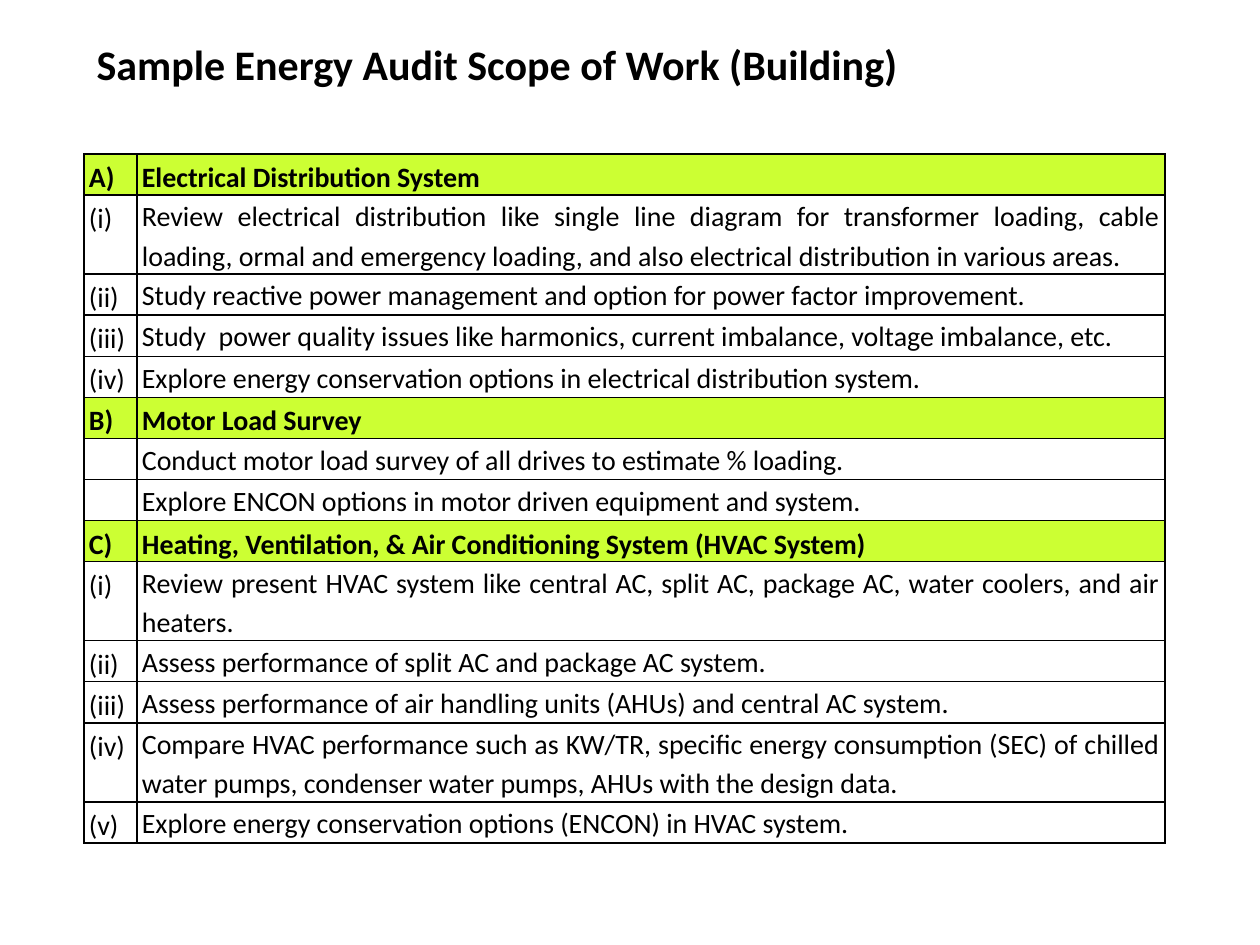
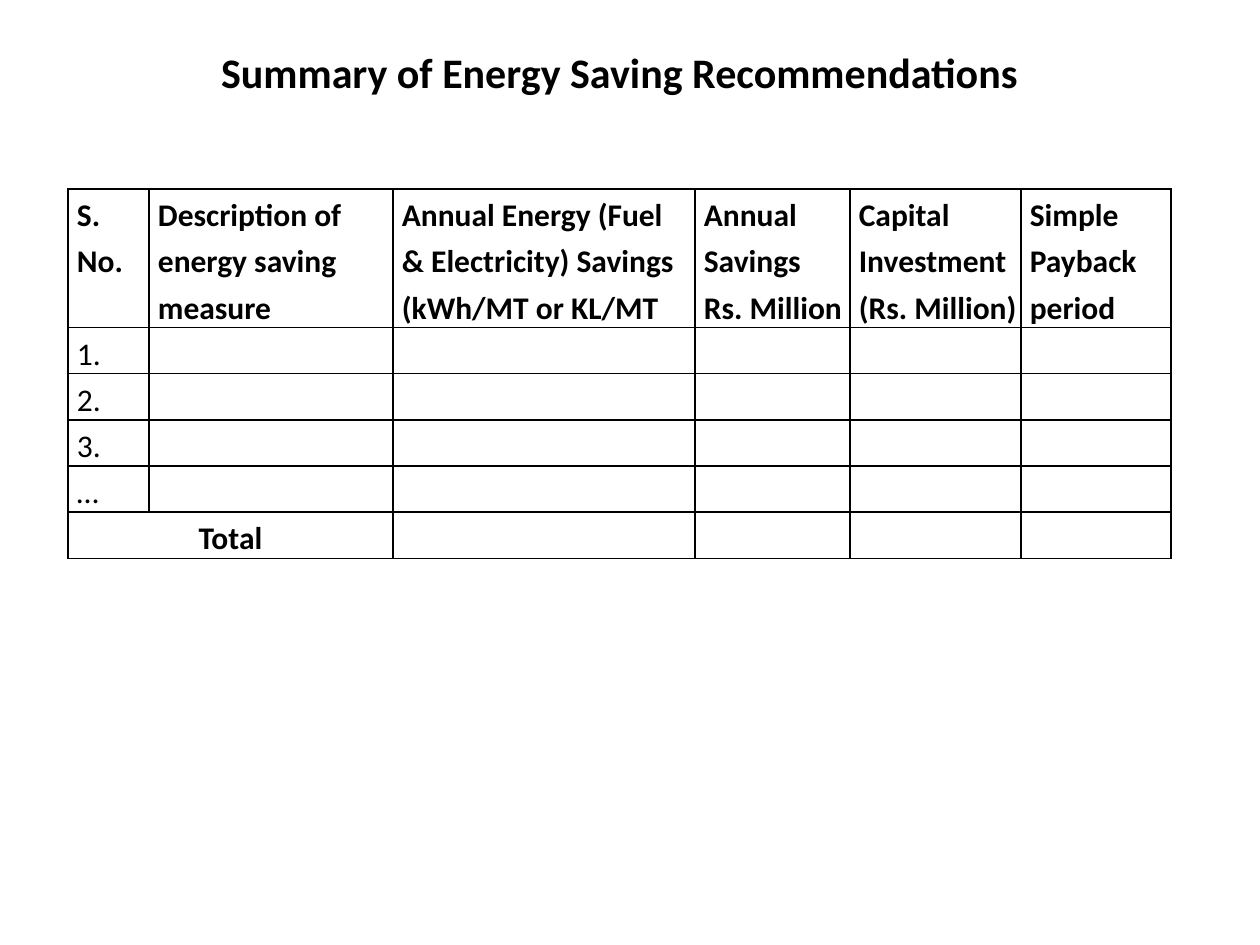
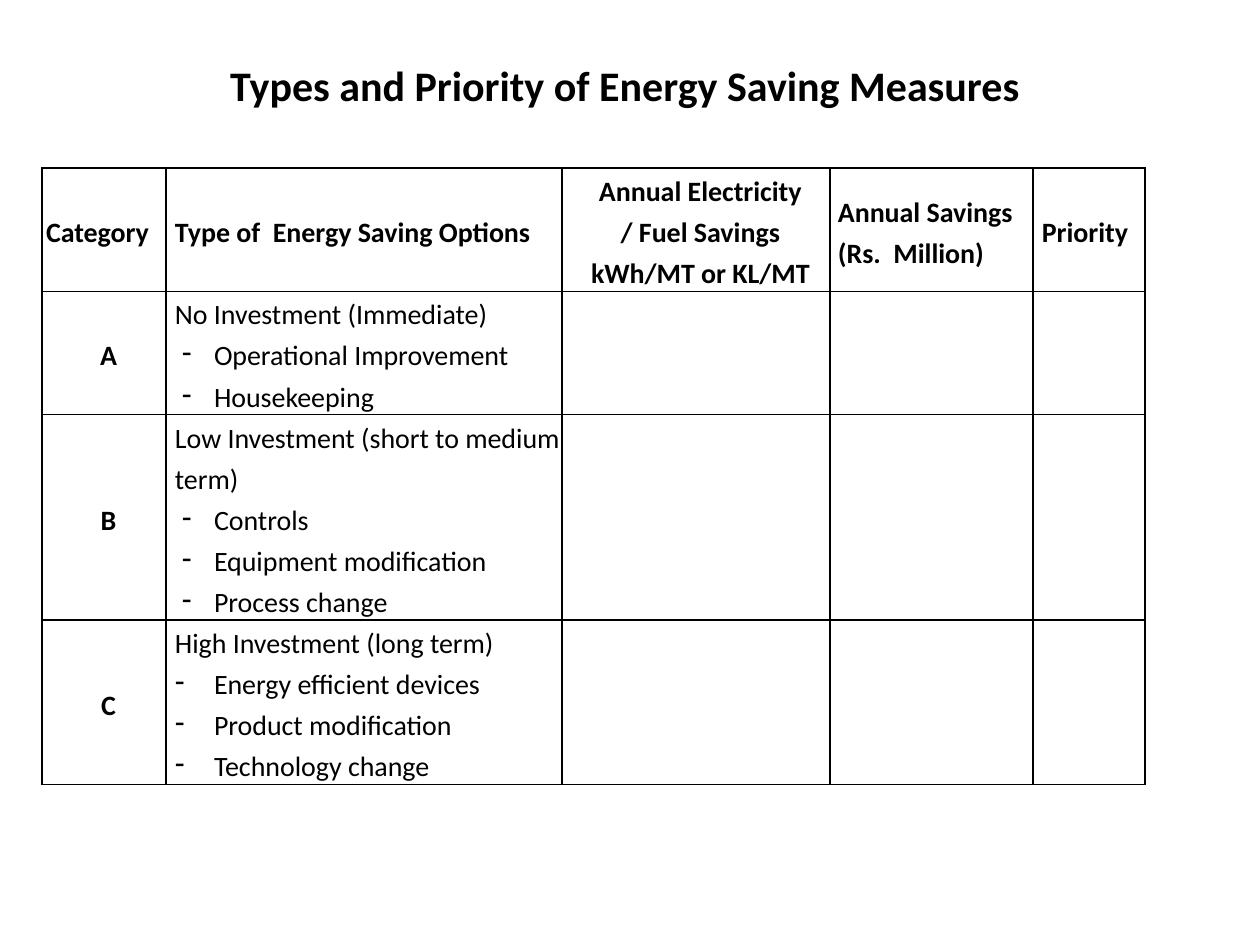
import pptx
import pptx.util
import pptx.dml.color
import pptx.enum.text
import pptx.oxml
import pptx.oxml.ns

PX = 914400 / 126
BLACK = pptx.dml.color.RGBColor(0x00, 0x00, 0x00)
LIME = pptx.dml.color.RGBColor(0xCC, 0xFF, 0x33)
ALIGN = pptx.enum.text.PP_ALIGN
ANCHOR = pptx.enum.text.MSO_ANCHOR
NS = pptx.oxml.ns.nsdecls("a")
MARGINS = ("margin_left", "margin_right", "margin_top", "margin_bottom")
BORDER = (
    '<a:{0} {1} w="12700"><a:solidFill><a:srgbClr val="{2}"/></a:solidFill></a:{0}>'
)

prs = pptx.Presentation()
prs.slide_width = int(1260 * PX)
prs.slide_height = int(945 * PX)


def add_table_slide(title, title_box, align, origin, cols, rows):
    s = prs.slides.add_slide(prs.slide_layouts[5])
    sp = s.shapes.title
    for k, v in zip(("left", "top", "width", "height"), title_box):
        setattr(sp, k, int(v * PX))
    tf = sp.text_frame
    tf.text = title
    tf.vertical_anchor = ANCHOR.TOP
    tf.auto_size = pptx.enum.text.MSO_AUTO_SIZE.NONE
    p = tf.paragraphs[0]
    p.alignment = align
    r = p.runs[0]
    for k, v in {"name": "Calibri", "size": pptx.util.Pt(24), "bold": True}.items():
        setattr(r.font, k, v)
    r.font.color.rgb = BLACK

    box = [int(v * PX) for v in (*origin, sum(cols), sum(rows))]
    tbl = s.shapes.add_table(len(rows), len(cols), *box).table
    tbl.first_row = tbl.horz_banding = False
    for col, w in zip(tbl.columns, cols):
        col.width = int(w * PX)
    for row, h in zip(tbl.rows, rows):
        row.height = int(h * PX)
    for cell in tbl.iter_cells():
        for k in MARGINS:
            setattr(cell, k, 0)
        tcPr = cell._tc.get_or_add_tcPr()
        for side in ("lnL", "lnR", "lnT", "lnB"):
            tcPr.append(pptx.oxml.parse_xml(BORDER.format(side, NS, BLACK)))
        cell.fill.background()
    return tbl


def write(cell, text, size, bold=False, indent=0, hang=32, **fmt):
    tf = cell.text_frame
    for i, line in enumerate(text.split("\n")):
        p = tf.paragraphs[0] if i == 0 else tf.add_paragraph()
        for k, v in {"line_spacing": 1.2, **fmt}.items():
            setattr(p, k, v)
        pPr = p._p.get_or_add_pPr()
        bullet = line.startswith("- ")
        pPr.set("marL", str(int((48 if bullet else indent) * PX)))
        if bullet:
            pPr.set("indent", str(int(-hang * PX)))
            pPr.append(pptx.oxml.parse_xml(f'<a:buChar {NS} char="-"/>'))
        r = p.add_run()
        r.text = line.removeprefix("- ")
        for k, v in {"name": "Calibri", "size": pptx.util.Pt(size), "bold": bold}.items():
            setattr(r.font, k, v)
        r.font.color.rgb = BLACK


scope = [
    ("A)", "Electrical Distribution System"),
    ("(i)", "Review electrical distribution like single line diagram for transformer loading, cable loading, ormal and emergency loading, and also electrical distribution in various areas. "),
    ("(ii)", "Study reactive power management and option for power factor improvement."),
    ("(iii)", "Study  power quality issues like harmonics, current imbalance, voltage imbalance, etc."),
    ("(iv)", "Explore energy conservation options in electrical distribution system."),
    ("B)", "Motor Load Survey"),
    ("", "Conduct motor load survey of all drives to estimate % loading."),
    ("", "Explore ENCON options in motor driven equipment and system."),
    ("C)", "Heating, Ventilation, & Air Conditioning System (HVAC System)"),
    ("(i)", "Review present HVAC system like central AC, split AC, package AC, water coolers, and air heaters."),
    ("(ii)", "Assess performance of split AC and package AC system."),
    ("(iii)", "Assess performance of air handling units (AHUs) and central AC system."),
    ("(iv)", "Compare HVAC performance such as KW/TR, specific energy consumption (SEC) of chilled water pumps, condenser water pumps, AHUs with the design data."),
    ("(v)", "Explore energy conservation options (ENCON) in HVAC system."),
]
heights = [79 if len(text) > 90 else 41 for _, text in scope]
tbl = add_table_slide("Sample Energy Audit Scope of Work (Building)", (84, 32, 1092, 63),
                      ALIGN.LEFT, (84, 154), (53, 1028), heights)
for row, (number, text) in zip(tbl.rows, scope):
    heading = number in ("A)", "B)", "C)")
    for cell, content, spacing in zip(row.cells, (number, text), (1.2, 1.2 if heading else 1.15)):
        cell.margin_left = cell.margin_right = int(5 * PX)
        if heading:
            cell.fill.solid()
            cell.fill.fore_color.rgb = LIME
        if content:
            write(cell, content, 16, heading, alignment=ALIGN.JUSTIFY,
                  line_spacing=spacing, space_after=pptx.util.Pt(6))

heads = ["S.\nNo.", "Description of energy saving measure",
         "Annual Energy (Fuel\n& Electricity) Savings (kWh/MT or KL/MT",
         "Annual Savings\nRs. Million", "Capital Investment (Rs. Million)",
         "Simple Payback period"]
tbl = add_table_slide("Summary of Energy Saving Recommendations", (126, 40, 987, 63),
                      ALIGN.CENTER, (68, 189), (81, 244, 302, 155, 171, 150), [136] + [45] * 5)
for i, head in enumerate(heads):
    cell = tbl.cell(0, i)
    cell.vertical_anchor = ANCHOR.MIDDLE if i else ANCHOR.TOP
    write(cell, head, 18, True, 9)
for i, number in enumerate(["1.", "2.", "3.", "…"], 1):
    write(tbl.cell(i, 0), number, 18, indent=9)
total = tbl.cell(5, 0)
total.merge(tbl.cell(5, 1))
total.vertical_anchor = ANCHOR.MIDDLE
write(total, "Total", 18, True, alignment=ALIGN.CENTER)

heads = [("Category", 4, ALIGN.LEFT), ("Type of  Energy Saving Options", 9, ALIGN.LEFT),
         ("Annual Electricity\n/ Fuel Savings\nkWh/MT or KL/MT", 9, ALIGN.CENTER),
         ("Annual Savings\n(Rs.  Million)", 8, ALIGN.LEFT), ("Priority", 9, ALIGN.LEFT)]
options = [
    ("A", "No Investment (Immediate)\n- Operational Improvement\n- Housekeeping", 32),
    ("B", "Low Investment (short to medium term)\n- Controls\n- Equipment modification\n- Process change", 32),
    ("C", "High Investment (long term)\n- Energy efficient devices\n- Product modification\n- Technology change", 39),
]
tbl = add_table_slide("Types and Priority of Energy Saving Measures", (53, 53, 1144, 63),
                      ALIGN.CENTER, (42, 168), (124, 396, 268, 203, 112), (121, 121, 201, 161))
for cell in tbl.iter_cells():
    cell.vertical_anchor = ANCHOR.MIDDLE
for i, (head, indent, align) in enumerate(heads):
    write(tbl.cell(0, i), head, 16, True, indent, alignment=align)
for i, (category, text, hang) in enumerate(options, 1):
    write(tbl.cell(i, 0), category, 16, True, 9, alignment=ALIGN.CENTER)
    write(tbl.cell(i, 1), text, 16, False, 9, hang)

prs.save("out.pptx")
